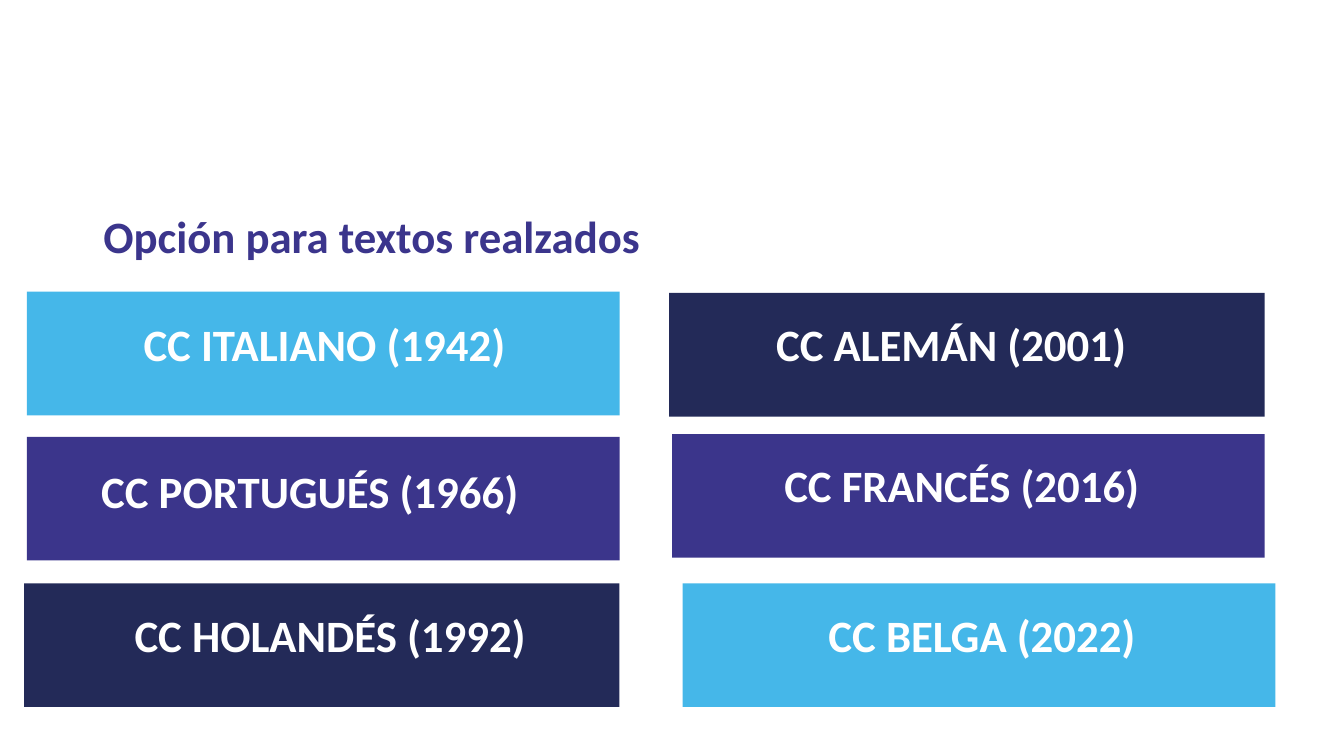
from pptx import Presentation
from pptx.dml.color import RGBColor
from pptx.enum.shapes import MSO_SHAPE
from pptx.enum.text import MSO_AUTO_SIZE, PP_ALIGN
from pptx.util import Inches, Pt

SKY, VIOLET, NAVY, WHITE = "45B7E9", "3B358B", "232A58", "FFFFFF"
HEADING = "3B358C"
BAR_HEIGHT = 0.92
LABEL_WIDTH, LABEL_HEIGHT = 3.33, 0.5

# Bar left, top, width, colour; label left, top, text
CODES = [
    (0.2, 2.17, 4.41, SKY, 0.75, 2.31, "CC ITALIANO (1942)"),
    (0.2, 3.25, 4.41, VIOLET, 0.64, 3.4, "CC PORTUGUÉS (1966)"),
    (0.18, 4.34, 4.43, NAVY, 0.83, 4.47, "CC HOLANDÉS (1992) "),
    (4.98, 2.18, 4.43, NAVY, 5.45, 2.31, "CC ALEMÁN (2001) "),
    (5, 3.23, 4.41, VIOLET, 5.53, 3.36, "CC FRANCÉS (2016) "),
    (5.08, 4.34, 4.41, SKY, 5.68, 4.47, "CC BELGA (2022) "),
]


def rgb(color):
    return RGBColor.from_string(color)


def add_bar(slide, left, top, width, color):
    s = slide.shapes.add_shape(MSO_SHAPE.RECTANGLE, Inches(left), Inches(top),
                               Inches(width), Inches(BAR_HEIGHT))
    s.shadow.inherit = False
    s.fill.solid()
    s.fill.fore_color.rgb = rgb(color)
    s.line.fill.background()


def add_text(slide, left, top, width, height, text, color, align=PP_ALIGN.LEFT):
    s = slide.shapes.add_textbox(Inches(left), Inches(top),
                                 Inches(width), Inches(height))
    tf = s.text_frame
    tf.word_wrap = True
    tf.auto_size = MSO_AUTO_SIZE.SHAPE_TO_FIT_TEXT
    p = tf.paragraphs[0]
    p.text = text
    p.alignment = align
    p.font.name = "Calibri"
    p.font.size = Pt(24)
    p.font.bold = True
    p.font.color.rgb = rgb(color)


def main():
    # Widescreen page, 16:9
    prs = Presentation()
    prs.slide_width = Inches(10)
    prs.slide_height = Inches(10 * 9 / 16)
    slide = prs.slides.add_slide(prs.slide_layouts[6])

    # Heading
    add_text(slide, 0.67, 1.5, 8.42, 0.52, "Opción para textos realzados", HEADING)

    # Civil codes: a coloured bar with its label
    for left, top, width, color, label_left, label_top, text in CODES:
        add_bar(slide, left, top, width, color)
        add_text(slide, label_left, label_top, LABEL_WIDTH, LABEL_HEIGHT,
                 text, WHITE, PP_ALIGN.CENTER)

    prs.save("out.pptx")


if __name__ == "__main__":
    main()
